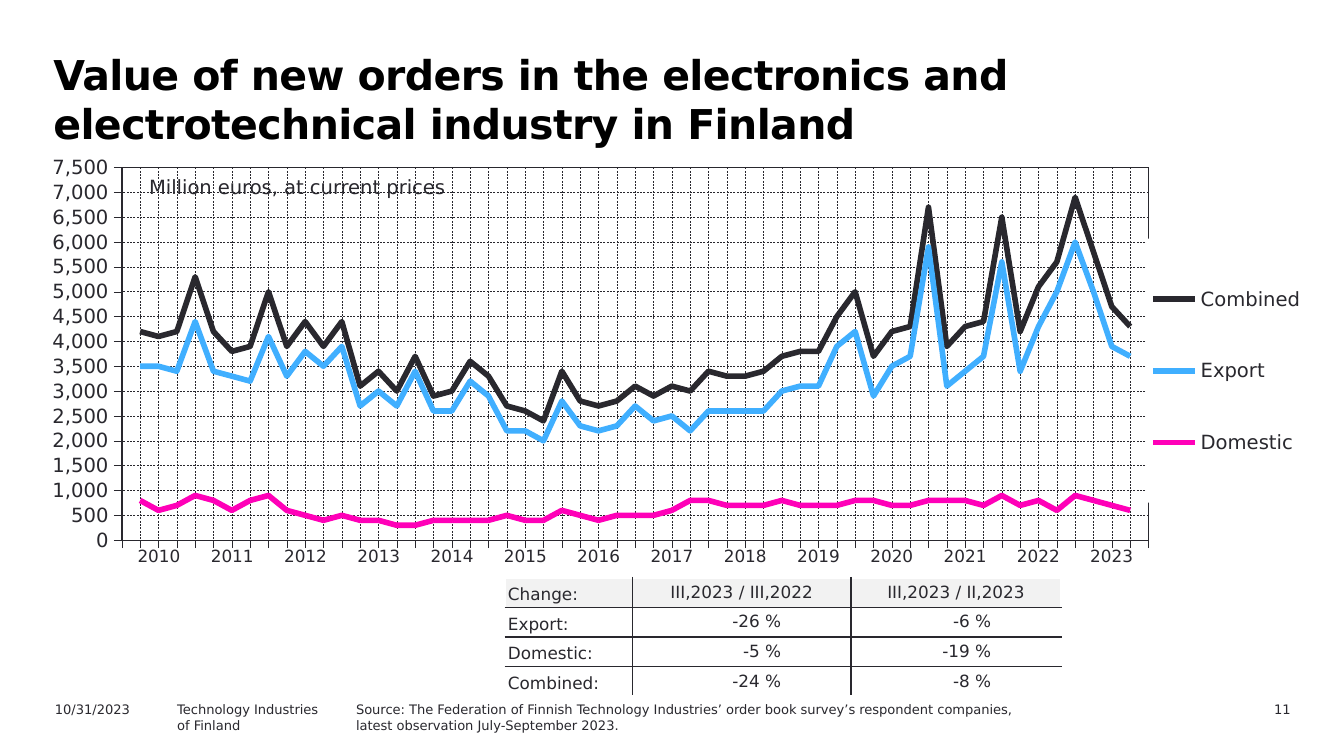
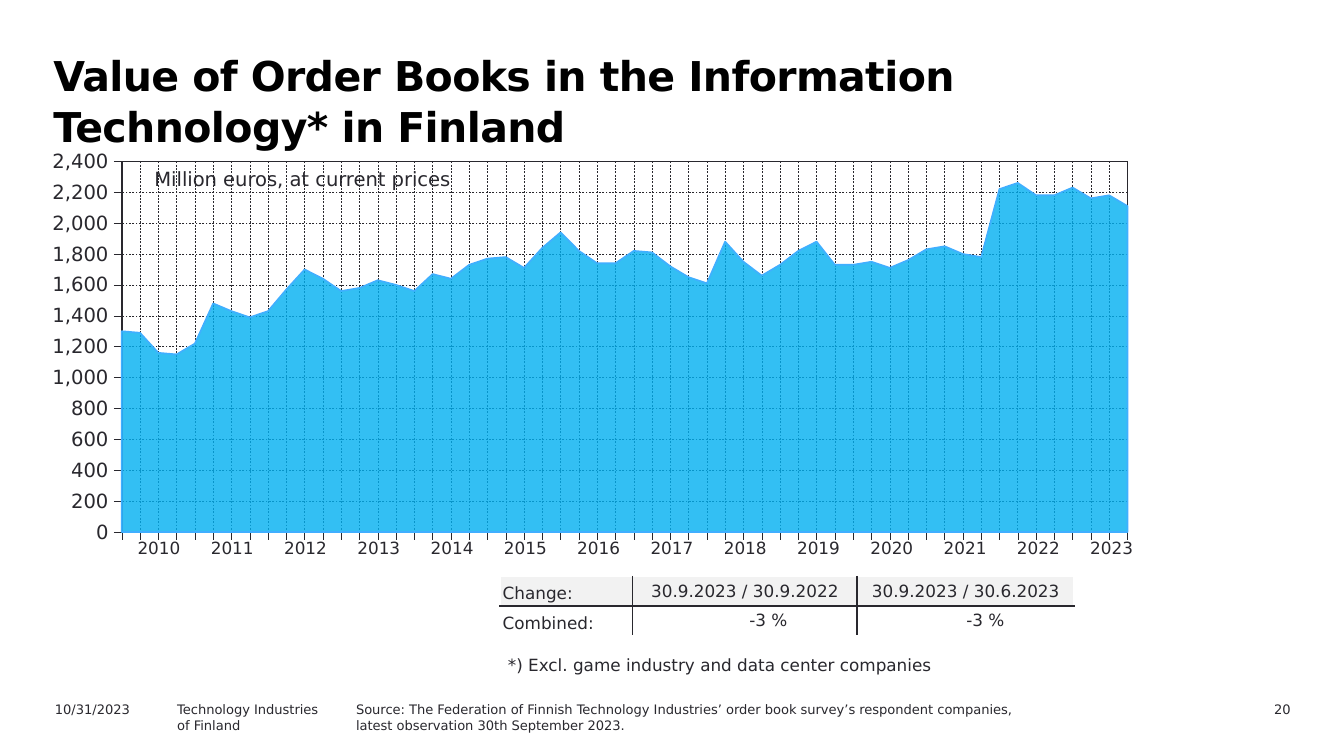
from pptx import Presentation, oxml
from pptx.chart import data as chart_data
from pptx.dml.color import RGBColor
from pptx.enum import chart as charts, dml, text
from pptx.oxml import ns
from pptx.util import Cm, Pt

# Shared look
INK, BLACK, WHITE, BAND = "29282E", "000000", "FFFFFF", "F2F2F2"
BLUE, PINK, SKY = "40AFFF", "FF00B8", "00B0F0"
FONT, CHART_FONT = "DejaVu Sans", "Arial"
NO_STYLE = "{2D5ABB26-0587-4C30-8999-92F81FD0307C}"
LEFT, CENTER, RIGHT = text.PP_ALIGN.LEFT, text.PP_ALIGN.CENTER, text.PP_ALIGN.RIGHT
TOP, MIDDLE, BOTTOM = (text.MSO_ANCHOR.TOP, text.MSO_ANCHOR.MIDDLE,
                       text.MSO_ANCHOR.BOTTOM)
BOX_INSETS = (0.25, 0.13, 0.25, 0.13)
LABEL_INSETS = (0.23, 0.13, 0.23, 0.13)
FOOTER_TOP = 13.13
SOURCE = ("Source: The Federation of Finnish Technology Industries’ order book "
          "survey’s respondent companies, latest observation ")

# Quarterly figures, in hundreds of euros millions (orders) and tens (order books)
COMBINED = [42, 41, 42, 53, 42, 38, 39, 50, 39, 44, 39, 44, 31, 34, 30, 37, 29, 30, 36,
            33, 27, 26, 24, 34, 28, 27, 28, 31, 29, 31, 30, 34, 33, 33, 34, 37, 38, 38,
            45, 50, 37, 42, 43, 67, 39, 43, 44, 65, 42, 51, 56, 69, 58, 47, 43]
EXPORT = [35, 35, 34, 44, 34, 33, 32, 41, 33, 38, 35, 39, 27, 30, 27, 34, 26, 26, 32,
          29, 22, 22, 20, 28, 23, 22, 23, 27, 24, 25, 22, 26, 26, 26, 26, 30, 31, 31,
          39, 42, 29, 35, 37, 59, 31, 34, 37, 56, 34, 43, 50, 60, 50, 39, 37]
DOMESTIC = [8, 6, 7, 9, 8, 6, 8, 9, 6, 5, 4, 5, 4, 4, 3, 3, 4, 4, 4,
            4, 5, 4, 4, 6, 5, 4, 5, 5, 5, 6, 8, 8, 7, 7, 7, 8, 7, 7,
            7, 8, 8, 7, 7, 8, 8, 8, 7, 9, 7, 8, 6, 9, 8, 7, 6]
ORDER_BOOKS = [130, 129, 116, 115, 122, 148, 143, 139, 143, 157, 170, 164, 156, 158,
               163, 160, 156, 167, 164, 173, 177, 178, 171, 184, 194, 182, 174, 174,
               182, 181, 172, 165, 161, 188, 175, 166, 173, 182, 188, 173, 173, 175,
               171, 176, 183, 185, 180, 178, 222, 226, 218, 218, 223, 216, 218, 211]


def rgb(code):
    return RGBColor.from_string(code)


def xml(body):
    """Parse one element that uses the drawing and chart prefixes."""
    head, rest = body.split(">", 1)
    slash = "/" if head.endswith("/") else ""
    return oxml.parse_xml(f"{head.rstrip('/')} {ns.nsdecls('a', 'c')}{slash}>{rest}")


# Text
def set_font(font, size, color=INK, bold=False, name=FONT):
    font.name, font.size, font.bold = name, Pt(size), bold
    font.color.rgb = rgb(color)


def set_margins(holder, insets):
    (holder.margin_left, holder.margin_top,
     holder.margin_right, holder.margin_bottom) = [Cm(inset) for inset in insets]


def add_text(page, at, words, size, align=LEFT, color=INK, bold=False,
             insets=BOX_INSETS, wrap=True):
    box = page.shapes.add_textbox(*[Cm(length) for length in at])
    frame = box.text_frame
    frame.word_wrap = wrap
    set_margins(frame, insets)
    frame.text = words
    for para in frame.paragraphs:
        para.alignment = align
        for span in para.runs:
            set_font(span.font, size, color, bold)
    return frame


def add_title(page, words, spacing=None):
    frame = add_text(page, (0.76, 0.81, 22.15, 2.03), words, 22, color=BLACK, bold=True)
    para = frame.paragraphs[0]
    para.line_spacing = spacing
    for span in para.runs:
        span.font._element.set("spc", "-30")


def add_footer(page, number, observed):
    add_text(page, (22.25, FOOTER_TOP, 2.39, 0.46), number, 7, RIGHT)
    add_text(page, (6.48, FOOTER_TOP, 13.2, 0.76), SOURCE + observed, 7)
    add_text(page, (3.1, FOOTER_TOP, 4.57, 0.46), "Technology Industries\nof Finland", 7)
    add_text(page, (0.79, FOOTER_TOP, 2.54, 0.46), "10/31/2023", 7)


def add_unit_label(page, left, top):
    add_text(page, (left, top, 6.2, 0.69), "Million euros, at current prices", 10.5,
             insets=LABEL_INSETS, wrap=False)


# Tables
def add_plain_table(page, left, top, widths, row_height, row_count):
    frame = page.shapes.add_table(row_count, len(widths), Cm(left), Cm(top),
                                  Cm(sum(widths)), Cm(row_height * row_count))
    table = frame.table
    table.first_row = table.horz_banding = False
    for style in frame.element.iter(ns.qn("a:tableStyleId")):
        style.text = NO_STYLE
    for column, width in zip(table.columns, widths):
        column.width = Cm(width)
    for row in table.rows:
        row.height = Cm(row_height)
    return table


def fill_cell(cell, words, align, anchor, insets, fill=None):
    cell.text = words
    cell.vertical_anchor = anchor
    set_margins(cell, insets)
    para = cell.text_frame.paragraphs[0]
    para.alignment = align
    set_font(para.runs[0].font, 9)
    if fill:
        cell.fill.solid()
        cell.fill.fore_color.rgb = rgb(fill)
    else:
        cell.fill.background()


def set_borders(cell, colors):
    props = cell._tc.get_or_add_tcPr()
    for place, (side, color) in enumerate(zip("LRTB", colors)):
        props.insert(place, xml(
            f'<a:ln{side} w="12700"><a:solidFill><a:srgbClr val="{color}"/>'
            f'</a:solidFill></a:ln{side}>'))


def add_change_table(page, left, top, widths, rows):
    """Inner rules are dark, the outer edge is white."""
    table = add_plain_table(page, left, top, widths, 0.56, len(rows))
    last_row, last_column = len(rows) - 1, len(widths) - 1
    for r, row in enumerate(rows):
        for c, words in enumerate(row):
            cell = table.cell(r, c)
            right_inset = 1.32 if r and c else 0.05
            align = LEFT if c == 0 else RIGHT if r else CENTER
            fill_cell(cell, words, align, MIDDLE if c else BOTTOM,
                      (0.05, 0.05, right_inset, 0.05), WHITE if r else BAND)
            outer = (c == 0, c == last_column, r == 0, r == last_row)
            set_borders(cell, [WHITE if edge else INK for edge in outer])


def add_year_labels(page, top):
    years = range(2010, 2024)
    table = add_plain_table(page, 2.31, top, [19.4 / len(years)] * len(years), 0.79, 1)
    for c, year in enumerate(years):
        fill_cell(table.cell(0, c), str(year), CENTER, TOP, BOX_INSETS)


# Charts
def layout(x, y, w, h, inner=False):
    target = '<c:layoutTarget val="inner"/>' if inner else ""
    return xml(f'<c:layout><c:manualLayout>{target}<c:xMode val="edge"/>'
               f'<c:yMode val="edge"/><c:x val="{x}"/><c:y val="{y}"/>'
               f'<c:w val="{w}"/><c:h val="{h}"/></c:manualLayout></c:layout>')


def style_line(line, color, width, dash=None):
    line.color.rgb = rgb(color)
    line.width = Pt(width)
    if dash:
        line.dash_style = dash


def style_axis(axis):
    axis.major_tick_mark = charts.XL_TICK_MARK.OUTSIDE
    axis.minor_tick_mark = charts.XL_TICK_MARK.NONE
    style_line(axis.format.line, INK, 0.22)
    axis.has_major_gridlines = True
    style_line(axis.major_gridlines.format.line, INK, 0.25, dml.MSO_LINE.DASH)


def add_quarter_chart(page, kind, at, series, top_value, step, plot, size):
    data = chart_data.CategoryChartData(number_format="#,##0")
    data.categories = [str(quarter) for quarter in range(1, 55)]
    for name, values in series:
        data.add_series(name, values)
    chart = page.shapes.add_chart(kind, *[Cm(length) for length in at], data).chart
    chart.has_title = chart.has_legend = False
    set_font(chart.font, size, bold=True, name=CHART_FONT)
    chart.plots[0].vary_by_categories = False

    style_axis(chart.category_axis)
    chart.category_axis.tick_label_position = charts.XL_TICK_LABEL_POSITION.NONE
    values_axis = chart.value_axis
    style_axis(values_axis)
    values_axis.minimum_scale, values_axis.maximum_scale = 0, top_value
    values_axis.major_unit = step
    set_font(values_axis.tick_labels.font, 10.5)
    values_axis.tick_labels.number_format = "#,##0"
    values_axis.tick_labels.number_format_is_linked = False

    # Points sit on the tick marks
    axis_xml = values_axis._element
    for old in axis_xml.findall(ns.qn("c:crossBetween")):
        axis_xml.remove(old)
    axis_xml.find(ns.qn("c:crosses")).addnext(xml('<c:crossBetween val="midCat"/>'))

    # Fixed plot area with a frame
    area = chart._chartSpace.xpath("c:chart/c:plotArea")[0]
    for old in area.findall(ns.qn("c:layout")):
        area.remove(old)
    area.insert(0, layout(*plot, inner=True))
    area.append(xml('<c:spPr><a:noFill/><a:ln w="9525"><a:solidFill>'
                    f'<a:srgbClr val="{INK}"/></a:solidFill></a:ln></c:spPr>'))
    return chart


def add_legend(chart, place):
    chart.has_legend = True
    legend = chart.legend
    legend.position = charts.XL_LEGEND_POSITION.RIGHT
    legend.include_in_layout = False
    set_font(legend.font, 10.5)
    element = legend._element
    for old in element.findall(ns.qn("c:layout")):
        element.remove(old)
    element.find(ns.qn("c:legendPos")).addnext(layout(*place))
    element.find(ns.qn("c:overlay")).addnext(xml(
        f'<c:spPr><a:solidFill><a:srgbClr val="{WHITE}"/></a:solidFill></c:spPr>'))


def add_orders_chart(page):
    lines = [("Combined", COMBINED, INK), ("Export", EXPORT, BLUE),
             ("Domestic", DOMESTIC, PINK)]
    series = [(name, [None, *[value * 100 for value in values], None])
              for name, values, _ in lines]
    chart = add_quarter_chart(page, charts.XL_CHART_TYPE.LINE, (0.3, 2.82, 24.41, 8.46),
                              series, 7500, 500, (0.082, 0.041, 0.795, 0.833), 19.5)
    for line, (_, _, color) in zip(chart.series, lines):
        line.smooth = False
        style_line(line.format.line, color, 3)
    add_legend(chart, (0.875, 0.2, 0.125, 0.59))


def add_order_book_chart(page):
    series = [("Series 1", [value * 10 for value in ORDER_BOOKS])]
    chart = add_quarter_chart(page, charts.XL_CHART_TYPE.AREA_STACKED,
                              (0.51, 2.82, 23.88, 7.92), series, 2400, 200,
                              (0.075, 0.029, 0.796, 0.885), 18.2)
    area = chart.series[0] if hasattr(chart, "series") else chart.plots[0].series[0]
    area.format.fill.solid()
    area.format.fill.fore_color.rgb = rgb(SKY)
    tint = area._element.xpath("c:spPr/a:solidFill/a:srgbClr")[0]
    tint.append(xml('<a:alpha val="80000"/>'))
    style_line(area.format.line, BLUE, 0.88)


# Slides
def build_new_orders(page):
    add_title(page, "Value of new orders in the electronics and "
                    "electrotechnical industry in Finland")
    add_orders_chart(page)
    add_unit_label(page, 2.59, 3.18)
    add_change_table(page, 9.55, 10.92, (2.4, 4.13, 3.97), [
        ("Change:", "III,2023 / III,2022", "III,2023 / II,2023"),
        ("Export:", "-26 %", "-6 %"),
        ("Domestic:", "-5 %", "-19 %"),
        ("Combined:", "-24 %", "-8 %")])
    add_footer(page, "11", "July-September 2023.")
    add_year_labels(page, 10.21)


def build_order_books(page):
    add_title(page, "Value of Order Books in the Information Technology* in Finland",
              Pt(27))
    add_order_book_chart(page)
    add_unit_label(page, 2.69, 3.02)
    add_change_table(page, 9.45, 10.9, (2.5, 4.25, 4.1), [
        ("Change:", "30.9.2023 / 30.9.2022", "30.9.2023 / 30.6.2023"),
        ("Combined:", "-3 %", "-3 %")])
    add_text(page, (9.35, 12.24, 9.4, 0.64),
             "*) Excl. game industry and data center companies", 9)
    add_footer(page, "20", "30th September 2023.")
    add_year_labels(page, 10.06)


def main():
    deck = Presentation()
    deck.slide_width, deck.slide_height = Cm(25.4), Cm(14.29)
    for build in (build_new_orders, build_order_books):
        build(deck.slides.add_slide(deck.slide_layouts[6]))
    deck.save("out.pptx")


if __name__ == "__main__":
    main()
